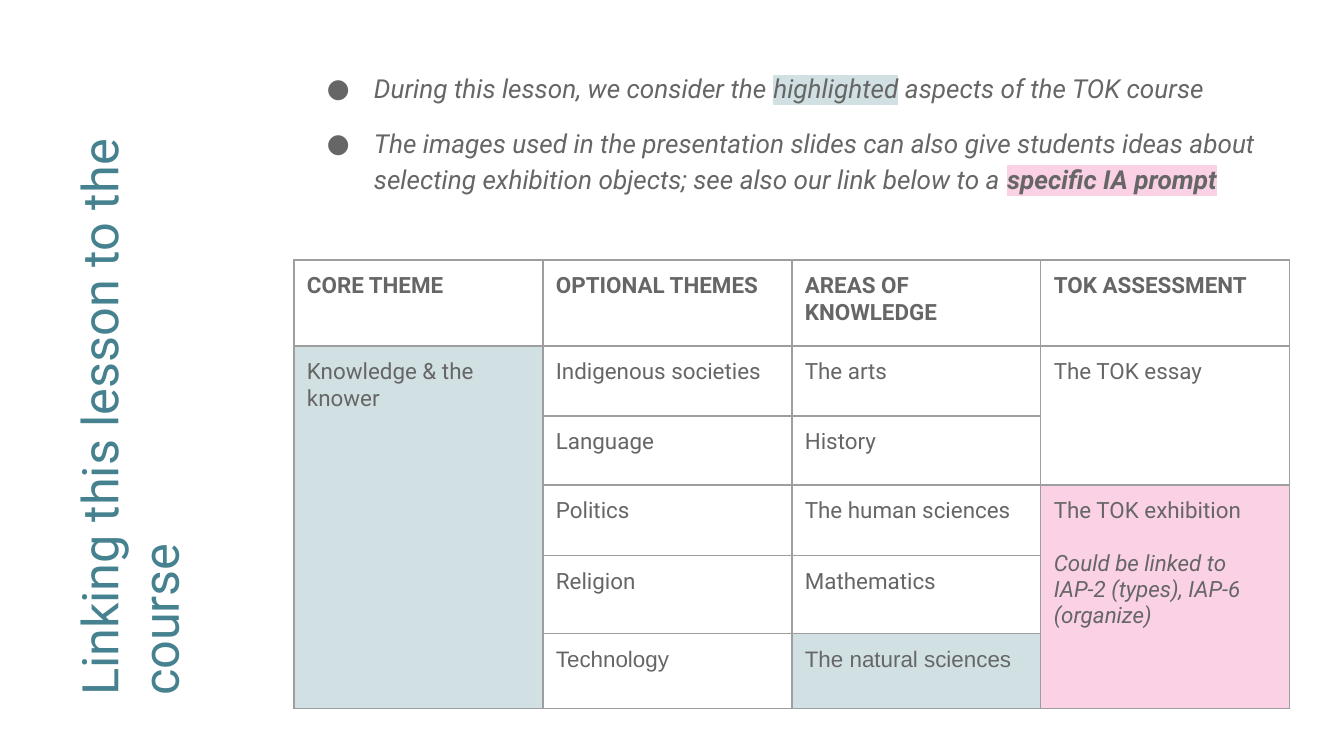
import pptx
import pptx.dml.color
import pptx.enum.text
import pptx.oxml
import pptx.oxml.ns
import pptx.util

SCALE = 914400 / 134.4
INSET = 13
TEAL = pptx.dml.color.RGBColor(0x45, 0x81, 0x8E)
GREY = pptx.dml.color.RGBColor(0x66, 0x66, 0x66)
BORDER = pptx.dml.color.RGBColor(0x9E, 0x9E, 0x9E)
PALE_BLUE = pptx.dml.color.RGBColor(0xD0, 0xE0, 0xE3)
PINK = pptx.dml.color.RGBColor(0xFB, 0xD1, 0xE6)
WHITE = pptx.dml.color.RGBColor(0xFF, 0xFF, 0xFF)

BULLETS = [
    [("During this lesson, we consider the ", None, False),
     ("highlighted", PALE_BLUE, False),
     (" aspects of the TOK course", None, False)],
    [("The images used in the presentation slides can also give students ideas about "
      "selecting exhibition objects; see also our link below to a ", None, False),
     ("specific IA prompt", PINK, True)],
]
COLUMN_WIDTH = 249
ROW_HEIGHTS = [86, 70, 69, 71, 78, 75]
ROWS = [
    ["CORE THEME", "OPTIONAL THEMES", "AREAS OF KNOWLEDGE", "TOK ASSESSMENT"],
    ["Knowledge & the knower", "Indigenous societies", "The arts", "The TOK essay"],
    ["", "Language", "History", ""],
    ["", "Politics", "The human sciences",
     "The TOK exhibition\nCould be linked to IAP-2 (types), IAP-6 (organize)"],
    ["", "Religion", "Mathematics", ""],
    ["", "Technology", "The natural sciences", ""],
]
MERGES = [((1, 0), (5, 0)), ((1, 3), (2, 3)), ((3, 3), (5, 3))]
CELL_FILLS = {(1, 0): PALE_BLUE, (5, 2): PALE_BLUE, (3, 3): PINK}


def px(length):
    return pptx.util.Emu(round(length * SCALE))


def add_xml(parent, content):
    namespace = pptx.oxml.ns.nsdecls("a")
    element = pptx.oxml.parse_xml(content.replace("/>", f" {namespace}/>", 1)
                                  if content.endswith("/>") and content.count("<") == 1
                                  else content.replace(">", f" {namespace}>", 1))
    parent.append(element)


def style_font(font, size, color, name="Roboto", bold=False, italic=False):
    font.size = pptx.util.Pt(size)
    font.color.rgb = color
    font.name = name
    font.bold = bold
    font.italic = italic


def set_margins(target):
    target.margin_left = target.margin_right = px(INSET)
    target.margin_top = target.margin_bottom = px(INSET)


def add_text_box(slide, left, top, width, height):
    shape = slide.shapes.add_textbox(px(left), px(top), px(width), px(height))
    shape.text_frame.word_wrap = True
    shape.text_frame.vertical_anchor = pptx.enum.text.MSO_ANCHOR.TOP
    set_margins(shape.text_frame)
    return shape


def add_title(slide):
    shape = add_text_box(slide, -177, 286, 655, 191)
    shape.rotation = 270
    paragraph = shape.text_frame.paragraphs[0]
    paragraph.text = "Linking this lesson to the course"
    style_font(paragraph.runs[0].font, 27, TEAL)


def add_bullet_run(paragraph, text, highlight, bold):
    run = paragraph.add_run()
    run.text = text
    run.font.size = pptx.util.Pt(14)
    run.font.color.rgb = GREY
    if highlight is not None:
        add_xml(run.font._element,
                f'<a:highlight><a:srgbClr val="{highlight}"/></a:highlight>')
    style_font(run.font, 14, GREY, bold=bold, italic=True)


def add_bullets(slide):
    text_frame = add_text_box(slide, 294, 55, 1004, 164).text_frame
    for index, parts in enumerate(BULLETS):
        paragraph = text_frame.add_paragraph() if index else text_frame.paragraphs[0]
        properties = paragraph._p.get_or_add_pPr()
        properties.set("marL", str(px(67)))
        properties.set("indent", str(-px(47)))
        add_xml(properties, f'<a:buClr><a:srgbClr val="{GREY}"/></a:buClr>')
        add_xml(properties, '<a:buFont typeface="Roboto"/>')
        add_xml(properties, '<a:buChar char="●"/>')
        paragraph.line_spacing = 1.15
        if index:
            paragraph.space_before = paragraph.space_after = pptx.util.Pt(10)
        for text, highlight, bold in parts:
            add_bullet_run(paragraph, text, highlight, bold)


def style_cell(cell, row, column):
    set_margins(cell)
    cell.vertical_anchor = pptx.enum.text.MSO_ANCHOR.TOP
    for side in ("lnL", "lnR", "lnT", "lnB"):
        add_xml(cell._tc.get_or_add_tcPr(),
                f'<a:{side} w="9525"><a:solidFill><a:srgbClr val="{BORDER}"/>'
                f'</a:solidFill></a:{side}>')
    color = CELL_FILLS.get((row, column), WHITE if row == 0 else None)
    if color is None:
        cell.fill.background()
    else:
        cell.fill.solid()
        cell.fill.fore_color.rgb = color


def fill_cell(cell, text, row):
    cell.text_frame.text = text
    name = "Arial" if row == len(ROWS) - 1 else "Roboto"
    for index, paragraph in enumerate(cell.text_frame.paragraphs):
        if index:
            paragraph.space_before = pptx.util.Pt(14)
        for run in paragraph.runs:
            style_font(run.font, 12, GREY, name, bold=row == 0, italic=index > 0)


def add_course_table(slide):
    column_count = len(ROWS[0])
    table = slide.shapes.add_table(
        len(ROWS), column_count, px(294), px(260),
        px(COLUMN_WIDTH * column_count), px(sum(ROW_HEIGHTS))).table
    table.first_row = False
    table.horz_banding = False
    for column in table.columns:
        column.width = px(COLUMN_WIDTH)
    for row, height in zip(table.rows, ROW_HEIGHTS):
        row.height = px(height)
    for start, end in MERGES:
        table.cell(*start).merge(table.cell(*end))
    for row, texts in enumerate(ROWS):
        for column, text in enumerate(texts):
            cell = table.cell(row, column)
            style_cell(cell, row, column)
            if text:
                fill_cell(cell, text, row)


def main():
    presentation = pptx.Presentation()
    presentation.slide_width = px(1344)
    presentation.slide_height = px(756)
    slide = presentation.slides.add_slide(presentation.slide_layouts[6])
    add_title(slide)
    add_bullets(slide)
    add_course_table(slide)
    presentation.save("out.pptx")


if __name__ == "__main__":
    main()
